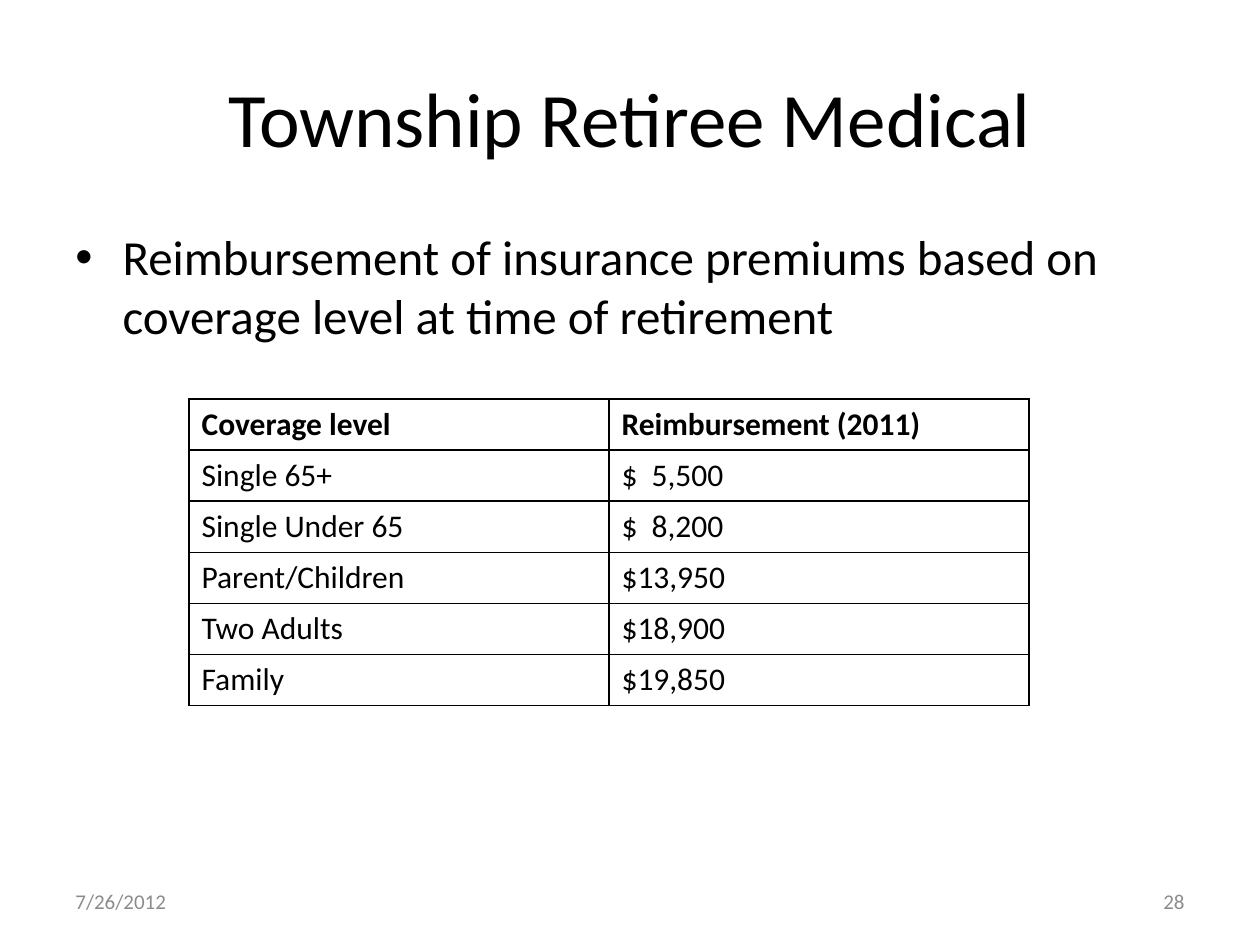
from lxml.etree import SubElement
from pptx import Presentation
from pptx.dml.color import RGBColor
from pptx.enum.text import MSO_ANCHOR as Anchor, PP_ALIGN as Align
from pptx.oxml.ns import qn
from pptx.util import Pt

BLACK = RGBColor(0x00, 0x00, 0x00)
GRAY = RGBColor(0x8C, 0x8C, 0x8C)
FONT = "Calibri"

COVERAGE = [
    ("Coverage level", "Reimbursement (2011)"),
    ("Single 65+", "$  5,500"),
    ("Single Under 65", "$  8,200"),
    ("Parent/Children", "$13,950"),
    ("Two Adults", "$18,900"),
    ("Family", "$19,850"),
]


def write(frame, text, size, color=BLACK, bold=False, align=Align.LEFT):
    frame.text = text
    paragraph = frame.paragraphs[0]
    paragraph.alignment = align
    font = paragraph.runs[0].font
    font.name, font.size, font.bold = FONT, Pt(size), bold
    font.color.rgb = color
    return paragraph


def add_text(slide, box, text, size, anchor=Anchor.TOP, **style):
    frame = slide.shapes.add_textbox(*map(Pt, box)).text_frame
    frame.word_wrap = True
    frame.vertical_anchor = anchor
    return write(frame, text, size, **style)


def add_title(slide, box, text):
    title = slide.shapes.title
    title.left, title.top, title.width, title.height = map(Pt, box)
    title.text_frame.vertical_anchor = Anchor.MIDDLE
    write(title.text_frame, text, 44, align=Align.CENTER)


def add_bullet(slide, box, text):
    paragraph = add_text(slide, box, text, 28)
    paragraph.space_before = Pt(5.6)
    properties = paragraph._p.get_or_add_pPr()
    properties.set("marL", str(Pt(27)))
    properties.set("indent", str(-Pt(27)))
    SubElement(properties, qn("a:buFont"), typeface="Arial")
    SubElement(properties, qn("a:buChar"), char="•")


def add_borders(cell):
    properties = cell._tc.get_or_add_tcPr()
    for side in ("L", "R", "T", "B"):
        line = SubElement(properties, qn(f"a:ln{side}"), w=str(Pt(1)))
        fill = SubElement(line, qn("a:solidFill"))
        SubElement(fill, qn("a:srgbClr"), val=str(BLACK))


def add_coverage_table(slide, box, rows):
    left, top, width, height = box
    table = slide.shapes.add_table(
        len(rows), len(rows[0]), Pt(left), Pt(top), Pt(width), Pt(height)).table
    table.first_row = table.horz_banding = False
    for r, row in enumerate(rows):
        table.rows[r].height = Pt(height / len(rows))
        for c, text in enumerate(row):
            cell = table.cell(r, c)
            write(cell.text_frame, text, 18, bold=r == 0)
            add_borders(cell)
            cell.fill.background()


def add_footer(slide, box, date, number):
    left, top, width, height = box
    part = 168
    for x, text, align in ((left, date, Align.LEFT),
                           (left + width - part, number, Align.RIGHT)):
        add_text(slide, (x, top, part, height), text, 12,
                 anchor=Anchor.MIDDLE, color=GRAY, align=align)


def main():
    deck = Presentation()
    deck.slide_width, deck.slide_height = Pt(720), Pt(540)
    slide = deck.slides.add_slide(deck.slide_layouts.get_by_name("Title Only"))
    add_title(slide, (36, 21.6, 648, 90), "Township Retiree Medical")
    add_bullet(slide, (36, 126, 654, 356.4),
               "Reimbursement of insurance premiums based on "
               "coverage level at time of retirement")
    add_coverage_table(slide, (108, 228, 480, 175.2), COVERAGE)
    add_footer(slide, (36, 500.5, 648, 28.75), "7/26/2012", "28")
    deck.save("out.pptx")


if __name__ == "__main__":
    main()
